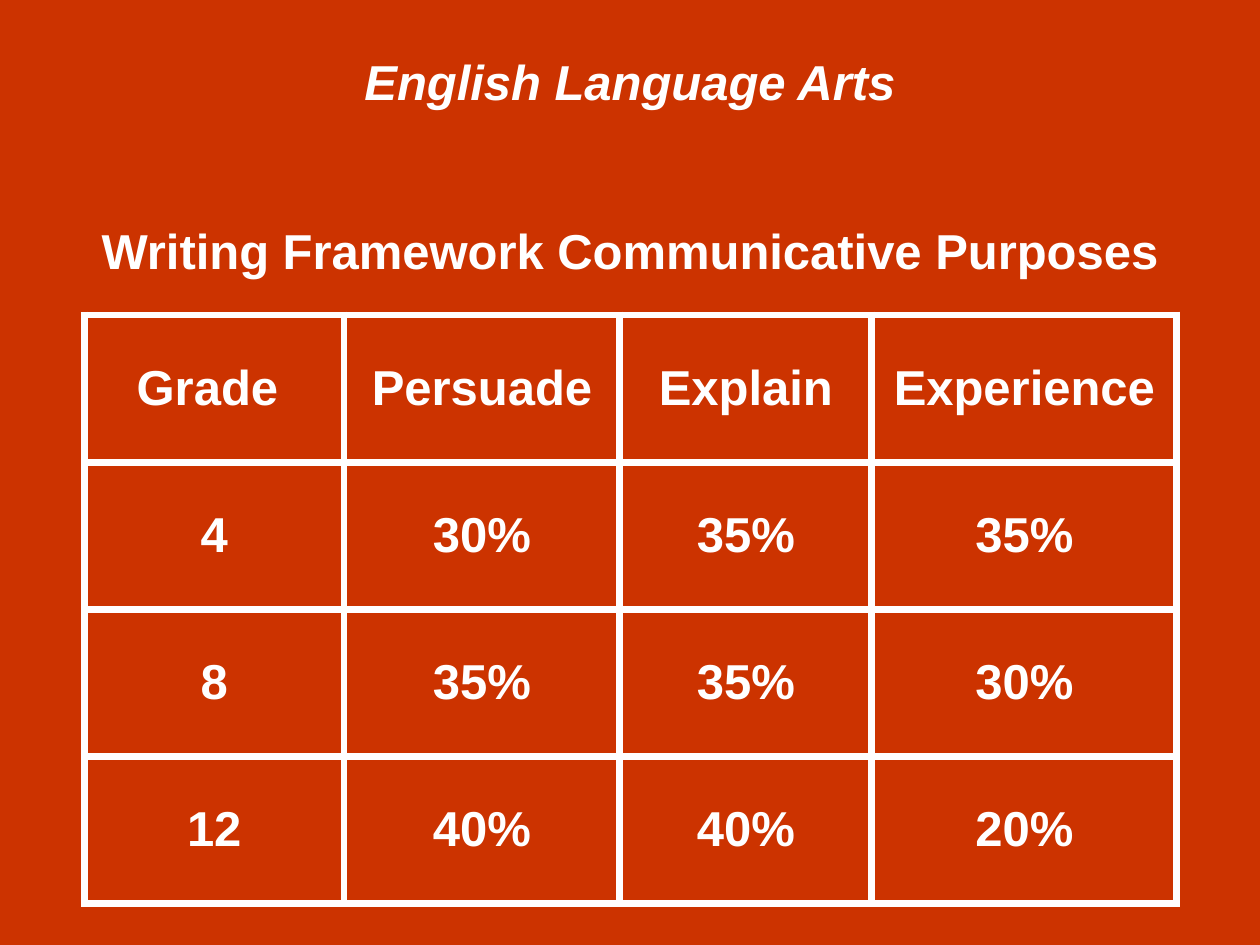
from lxml import etree
from pptx import Presentation
from pptx import util as u
from pptx.dml.color import RGBColor
from pptx.enum import text
from pptx.oxml.ns import qn

RED, WHITE = "CC3300", "FFFFFF"


def paint(fill, hue):
    fill.solid()
    fill.fore_color.rgb = RGBColor.from_string(hue)


def write(para, words, slant=False):
    para.alignment = text.PP_ALIGN.CENTER
    para.line_spacing = 1.0
    run = para.add_run()
    run.text = words
    font = run.font
    font.name, font.size = "Arial", u.Pt(28)
    font.bold, font.italic = True, slant
    paint(font.fill, WHITE)


deck = Presentation()
deck.slide_width, deck.slide_height = u.Inches(10), u.Inches(7.5)
slide = deck.slides.add_slide(deck.slide_layouts[5])
paint(slide.background.fill, RED)

# Heading
title = slide.shapes.title
title.left, title.top = u.Inches(0.5), u.Inches(0.33)
title.width, title.height = u.Inches(9), u.Inches(1.97)
frame = title.text_frame
frame.word_wrap = True
frame.auto_size = text.MSO_AUTO_SIZE.NONE
frame.vertical_anchor = text.MSO_ANCHOR.MIDDLE
write(frame.paragraphs[0], "English Language Arts", slant=True)
para = frame.add_paragraph()
para.space_before = u.Pt(62.7)
write(para, "Writing Framework Communicative Purposes")

# Purposes by grade
rows = [
    ["Grade ", "Persuade", "Explain", "Experience"],
    ["4", "30%", "35%", "35%"],
    ["8", "35%", "35%", "30%"],
    ["12", "40%", "40%", "20%"],
]
wide = [2.06, 2.19, 2, 2.42]
high = 4.67 / len(rows)
grid = slide.shapes.add_table(
    len(rows), len(wide), u.Inches(0.67), u.Inches(2.5),
    u.Inches(sum(wide)), u.Inches(4.67)).table
grid.first_row = grid.horz_banding = False
for col, width in zip(grid.columns, wide):
    col.width = u.Inches(width)
for r, row in enumerate(rows):
    grid.rows[r].height = u.Inches(high)
    for c, words in enumerate(row):
        cell = grid.cell(r, c)
        cell.vertical_anchor = text.MSO_ANCHOR.MIDDLE
        write(cell.text_frame.paragraphs[0], words)
        props = cell._tc.get_or_add_tcPr()
        for side in ("lnL", "lnR", "lnT", "lnB"):
            line = etree.SubElement(props, qn("a:" + side), w=str(u.Pt(4.5)))
            solid = etree.SubElement(line, qn("a:solidFill"))
            etree.SubElement(solid, qn("a:srgbClr"), val=WHITE)
        paint(cell.fill, RED)

deck.save("out.pptx")
